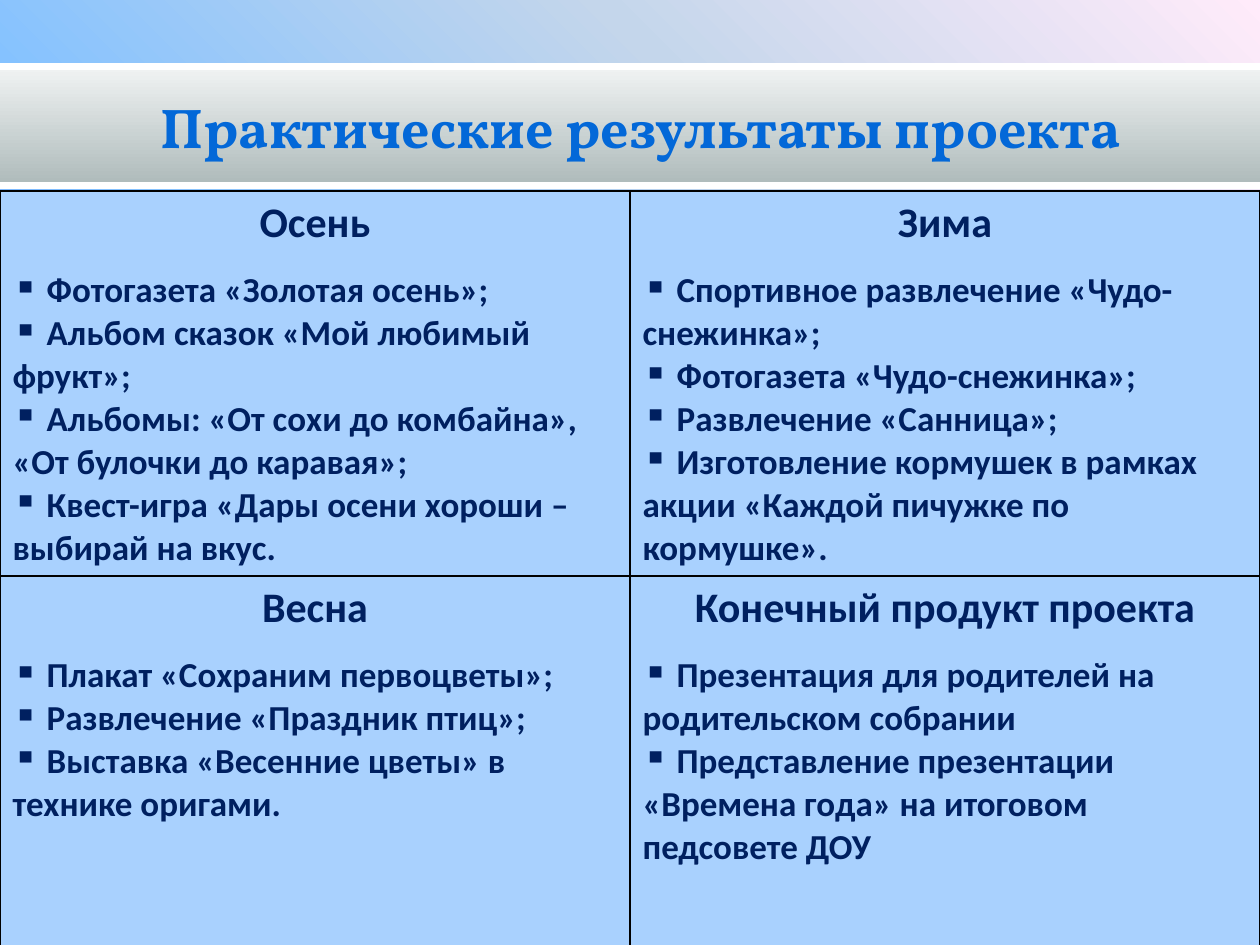
from lxml import etree
from pptx import Presentation
from pptx.dml.color import RGBColor
from pptx.enum.shapes import MSO_SHAPE
from pptx.enum.text import MSO_ANCHOR, PP_ALIGN
from pptx.oxml.ns import qn
from pptx.util import Pt

RECTANGLE = MSO_SHAPE.RECTANGLE
CENTER, LEFT = PP_ALIGN.CENTER, PP_ALIGN.LEFT
TOP, BOTTOM = MSO_ANCHOR.TOP, MSO_ANCHOR.BOTTOM
SCALE = 914400 / 126
WIDTH, HEIGHT = 1260, 945
NAVY, BLUE, CELL_BLUE = "002060", "0368D8", "A9D1FE"

SECTIONS = [
    ("Осень", [
        "Фотогазета «Золотая осень»;",
        "Альбом сказок «Мой любимый фрукт»;",
        "Альбомы: «От сохи до комбайна», «От булочки до каравая»;",
        "Квест-игра «Дары осени хороши – выбирай на вкус.",
    ]),
    ("Зима", [
        "Спортивное развлечение «Чудо-снежинка»;",
        "Фотогазета «Чудо-снежинка»;",
        "Развлечение «Санница»;",
        "Изготовление кормушек в рамках акции «Каждой пичужке по кормушке».",
    ]),
    ("Весна", [
        "Плакат «Сохраним первоцветы»;",
        "Развлечение «Праздник птиц»;",
        "Выставка «Весенние цветы» в технике оригами.",
    ]),
    ("Конечный продукт проекта", [
        "Презентация для родителей на родительском собрании",
        "Представление презентации «Времена года» на итоговом педсовете ДОУ",
    ]),
]


def px(length):
    return round(length * SCALE)


def color(code):
    return RGBColor.from_string(code)


def set_gradient(fill, owner, stops, angle):
    fill.gradient()
    fill.gradient_angle = angle
    stop_list = next(owner.iter(qn("a:gsLst")))
    for stop in list(stop_list):
        stop_list.remove(stop)
    for position, code in stops:
        stop = etree.SubElement(stop_list, qn("a:gs"), pos=str(position * 1000))
        etree.SubElement(stop, qn("a:srgbClr"), val=code)


def add_outline(parent, tag, code, index):
    line = etree.Element(qn(tag), w=str(Pt(1)))
    solid = etree.SubElement(line, qn("a:solidFill"))
    etree.SubElement(solid, qn("a:srgbClr"), val=code)
    parent.insert(index, line)


def style_font(font, name, size, code):
    font.name = name
    font.size = Pt(size)
    font.bold = True
    font.color.rgb = color(code)


def add_band(page, top, height):
    band = page.shapes.add_shape(RECTANGLE, 0, px(top), px(WIDTH), px(height))
    band.shadow.inherit = False
    band.line.fill.background()
    band.fill.solid()
    band.fill.fore_color.rgb = color("FFFFFF")
    return band


def build_header(page, top, height):
    strip = add_band(page, top + 6, height - 13)
    set_gradient(strip.fill, strip._element, [(0, "EFF2F2"), (100, "B0BCBC")], 270)
    add_band(page, top + height - 7, 7)
    add_band(page, top, 7)

    title = page.shapes.title
    page.shapes._spTree.append(title._element)
    title.left, title.top = px(115), px(top - 3)
    title.width, title.height = px(1052), px(107)
    title.text_frame.vertical_anchor = BOTTOM
    para = title.text_frame.paragraphs[0]
    para.alignment = CENTER
    para.line_spacing = 0.9
    span = para.add_run()
    span.text = "Практические результаты проекта"
    style_font(span.font, "Vollkorn", 32, BLUE)
    add_outline(span.font._element, "a:ln", NAVY, 0)


def fill_cell(cell, heading, items):
    cell.fill.solid()
    cell.fill.fore_color.rgb = color(CELL_BLUE)
    cell.vertical_anchor = TOP
    properties = cell._tc.get_or_add_tcPr()
    for index, side in enumerate(("a:lnL", "a:lnR", "a:lnT", "a:lnB")):
        add_outline(properties, side, "000000", index)

    para = cell.text_frame.paragraphs[0]
    para.text = heading
    para.alignment = CENTER
    para.space_after = Pt(12)
    style_font(para.font, "Calibri", 24, NAVY)
    for item in items:
        para = cell.text_frame.add_paragraph()
        para.text = " " + item
        para.alignment = LEFT
        etree.SubElement(para._p.get_or_add_pPr(), qn("a:buChar"), char="▪")
        style_font(para.font, "Calibri", 20, NAVY)


def build_results(page, left, top, width, height):
    frame = page.shapes.add_table(2, 2, px(left), px(top), px(width), px(height))
    table = frame.table
    table.first_row = False
    table.horz_banding = False
    for index, (heading, items) in enumerate(SECTIONS):
        fill_cell(table.cell(index // 2, index % 2), heading, items)


def main():
    deck = Presentation()
    deck.slide_width, deck.slide_height = px(WIDTH), px(HEIGHT)
    page = deck.slides.add_slide(deck.slide_layouts[5])
    stops = [(16, "5E9EFF"), (40, "85C2FF"), (70, "C4D6EB"), (100, "FFEBFA")]
    set_gradient(page.background.fill, page._element, stops, 45)
    build_header(page, 63, 126)
    build_results(page, 0, 191, WIDTH, 754)
    deck.save("out.pptx")


if __name__ == "__main__":
    main()
